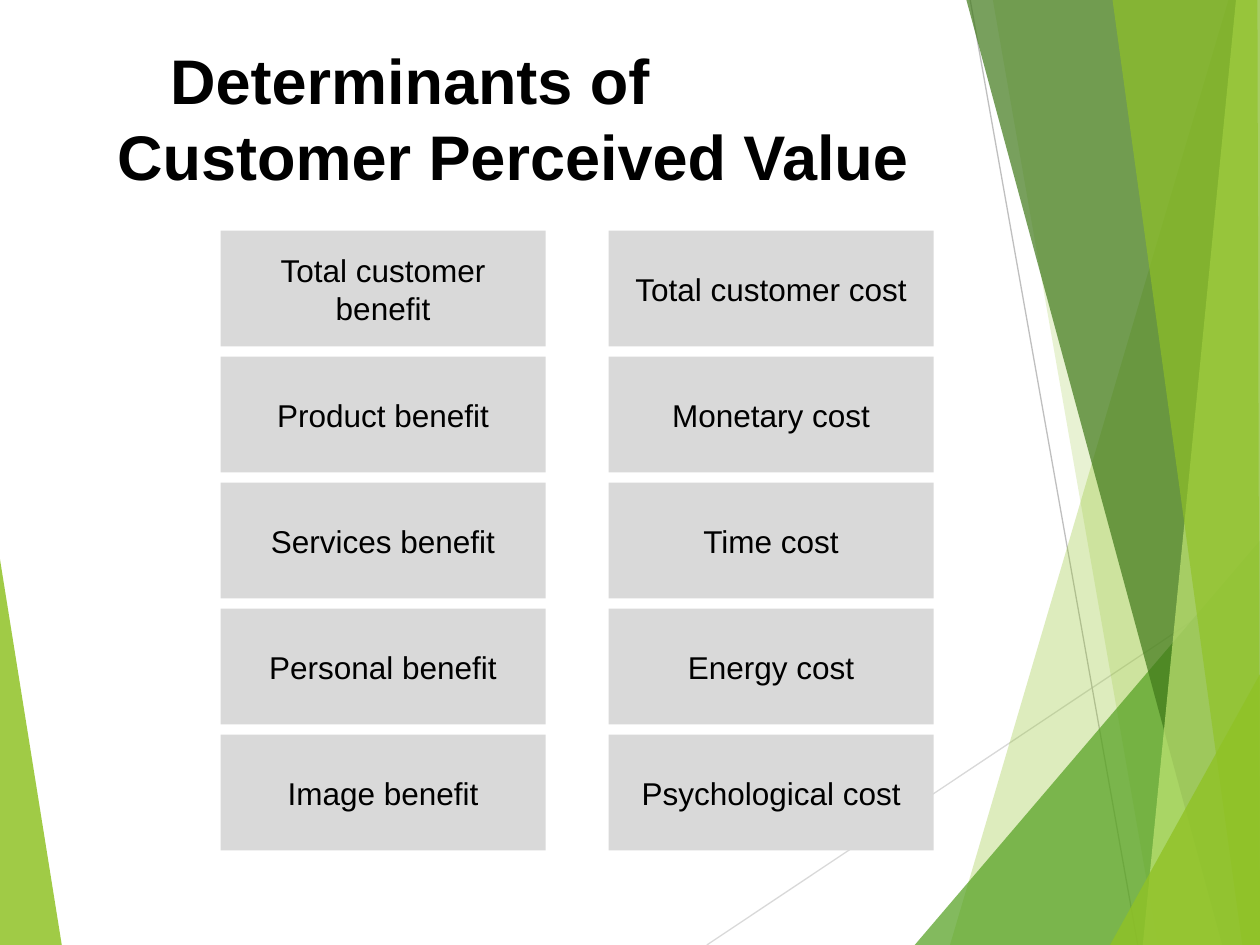
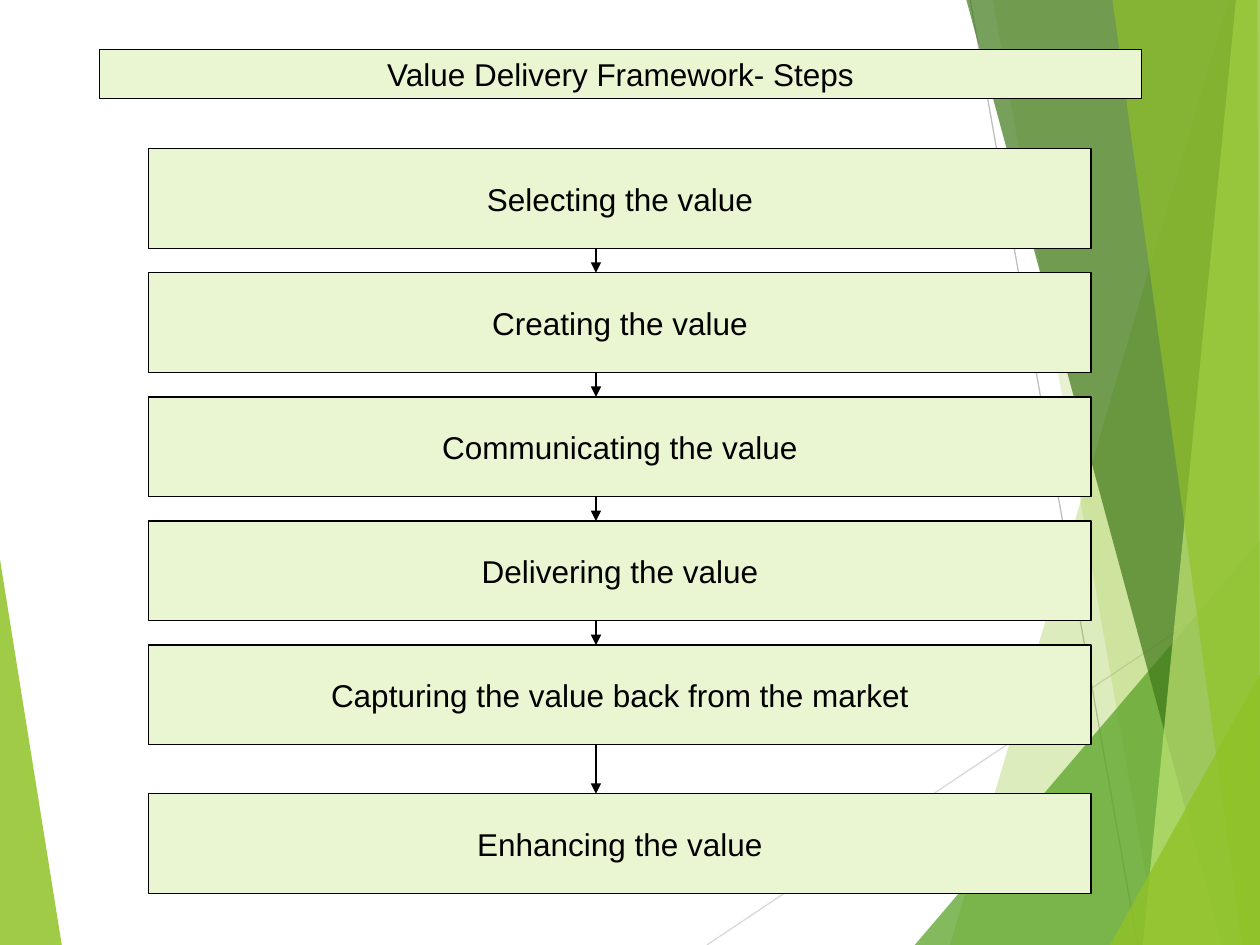
import dataclasses
import typing

import lxml.etree
import pptx
import pptx.dml.color
import pptx.enum.shapes
import pptx.enum.text
import pptx.oxml.ns
import pptx.util

Inches = pptx.util.Inches
qn = pptx.oxml.ns.qn
ALIGN = pptx.enum.text.PP_ALIGN


@dataclasses.dataclass(frozen=True)
class Theme:
    font: str = "Arial"
    ink: str = "000000"
    lime: str = "90C226"
    green: str = "54A021"
    dark: str = "3F7819"
    pale: str = "C0E474"
    mint: str = "EAF6D1"
    gray: str = "D9D9D9"
    steel: str = "BFBFBF"
    head: float = 36
    body: float = 18
    rule: float = 0.75


THEME = Theme()


class Box(typing.NamedTuple):
    left: float
    top: float
    width: float
    height: float


class Facet(typing.NamedTuple):
    color: str
    alpha: int  # opacity in percent
    points: tuple[tuple[float, float], ...]


class Rule(typing.NamedTuple):
    start: tuple[float, float]
    end: tuple[float, float]
    color: str


# Backdrop shared by both slides, from back to front
WEDGE = Facet(THEME.lime, 85, ((0, 4.44), (0.49, 7.5), (0, 7.5)))
RULES = (
    Rule((5.61, 7.5), (10, 4.57), THEME.gray),
    Rule((7.7, 0), (9.03, 7.5), THEME.steel),
)
FACETS = (
    Facet(THEME.lime, 30, ((9.75, 0), (7.54, 7.5), (10, 7.5), (10, 0))),
    Facet(THEME.lime, 20, ((7.88, 0), (9.19, 7.5), (10, 7.5), (10, 0))),
    Facet(THEME.green, 72, ((7.26, 7.5), (10, 4.29), (10, 7.5))),
    Facet(THEME.dark, 70, ((7.67, 0), (9.7, 7.5), (10, 7.5), (10, 0))),
    Facet(THEME.pale, 70, ((9.81, 0), (9.07, 7.5), (10, 7.5), (10, 0))),
    Facet(THEME.lime, 65, ((8.83, 0), (9.86, 7.5), (10, 7.5), (9.98, 0))),
    Facet(THEME.lime, 80, ((8.81, 7.5), (10, 5.35), (10, 7.5))),
)

# Slide content
FACTORS = (
    ("Total customer benefit", "Total customer cost"),
    ("Product benefit", "Monetary cost"),
    ("Services benefit", "Time cost"),
    ("Personal benefit", "Energy cost"),
    ("Image benefit", "Psychological cost"),
)
STEPS = (
    "Selecting the value",
    "Creating the value",
    "Communicating the value",
    "Delivering the value",
    "Capturing the value back from the market",
    "Enhancing the value",
)


def rgb(code: str) -> pptx.dml.color.RGBColor:
    return pptx.dml.color.RGBColor.from_string(code)


def write(shape, text: str, *, size: float = THEME.body, bold: bool = False,
          align=ALIGN.CENTER, indent: float = 0) -> None:
    """Fill a shape with one formatted paragraph."""
    frame = shape.text_frame
    frame.word_wrap = True
    frame.auto_size = pptx.enum.text.MSO_AUTO_SIZE.NONE
    frame.vertical_anchor = pptx.enum.text.MSO_ANCHOR.MIDDLE
    frame.text = text
    para = frame.paragraphs[0]
    para.alignment = align
    if indent:
        props = para._p.get_or_add_pPr()
        props.set("marL", "0")
        props.set("indent", str(Inches(indent)))
    for run in para.runs:
        run.font.name = THEME.font
        run.font.size = pptx.util.Pt(size)
        run.font.bold = bold
        run.font.color.rgb = rgb(THEME.ink)


def paint(shape, fill: str, line: str | None = None) -> None:
    shape.fill.solid()
    shape.fill.fore_color.rgb = rgb(fill)
    if line:
        shape.line.color.rgb = rgb(line)
        shape.line.width = pptx.util.Pt(THEME.rule)
    else:
        shape.line.fill.background()


def draw_box(slide, box: Box, text: str, fill: str, line: str | None = None) -> None:
    shape = slide.shapes.add_shape(
        pptx.enum.shapes.MSO_SHAPE.RECTANGLE, *map(Inches, box))
    shape.shadow.inherit = False
    paint(shape, fill, line)
    write(shape, text)


def draw_facet(slide, facet: Facet) -> None:
    first, *rest = [(Inches(x), Inches(y)) for x, y in facet.points]
    path = slide.shapes.build_freeform(*first)
    path.add_line_segments(rest)
    shape = path.convert_to_shape()
    shape.shadow.inherit = False
    paint(shape, facet.color)
    color = shape.element.spPr.find(".//" + qn("a:srgbClr"))
    lxml.etree.SubElement(color, qn("a:alpha"), val=str(facet.alpha * 1000))


def draw_rule(slide, rule: Rule, arrow: bool = False) -> None:
    link = slide.shapes.add_connector(
        pptx.enum.shapes.MSO_CONNECTOR.STRAIGHT,
        *map(Inches, rule.start + rule.end))
    link.line.color.rgb = rgb(rule.color)
    link.line.width = pptx.util.Pt(THEME.rule)
    props = link.element.spPr
    if arrow:
        lxml.etree.SubElement(props.find(qn("a:ln")), qn("a:tailEnd"), type="triangle")
    lxml.etree.SubElement(props, qn("a:effectLst"))


def new_slide(deck, box: Box):
    """Add a slide with the backdrop and its title placed in front."""
    slide = deck.slides.add_slide(deck.slide_layouts[5])
    draw_facet(slide, WEDGE)
    for rule in RULES:
        draw_rule(slide, rule)
    for facet in FACETS:
        draw_facet(slide, facet)
    title = slide.shapes.title
    title.left, title.top, title.width, title.height = map(Inches, box)
    title.element.getparent().append(title.element)
    return slide, title


def add_factors(deck) -> None:
    slide, title = new_slide(deck, Box(0.83, 0.28, 8.42, 1.3))
    write(title, "Determinants of\vCustomer Perceived Value", size=THEME.head,
          bold=True, align=ALIGN.LEFT, indent=0.42)
    for row, pair in enumerate(FACTORS):
        for col, text in enumerate(pair):
            box = Box(1.75 + 3.08 * col, 1.83 + row, 2.58, 0.92)
            draw_box(slide, box, text, THEME.gray)


def add_steps(deck) -> None:
    slide, title = new_slide(deck, Box(0.79, 0.39, 8.27, 0.39))
    paint(title, THEME.mint, THEME.ink)
    write(title, "Value Delivery Framework- Steps")

    # Five even steps, then the last one after a wider gap
    first, fifth, last, height = 1.18, 5.12, 6.3, 0.79
    tops = [first + (fifth - first) / 4 * row for row in range(5)] + [last]
    for top, text in zip(tops, STEPS):
        draw_box(slide, Box(1.18, top, 7.48, height), text, THEME.mint, THEME.ink)

    # Arrows run a little left of the middle
    for top, below in zip(tops, tops[1:]):
        draw_rule(slide, Rule((4.73, top + height), (4.73, below), THEME.ink), arrow=True)


def main() -> None:
    deck = pptx.Presentation()
    deck.slide_width, deck.slide_height = Inches(10), Inches(7.5)
    add_factors(deck)
    add_steps(deck)
    deck.save("out.pptx")


if __name__ == "__main__":
    main()
